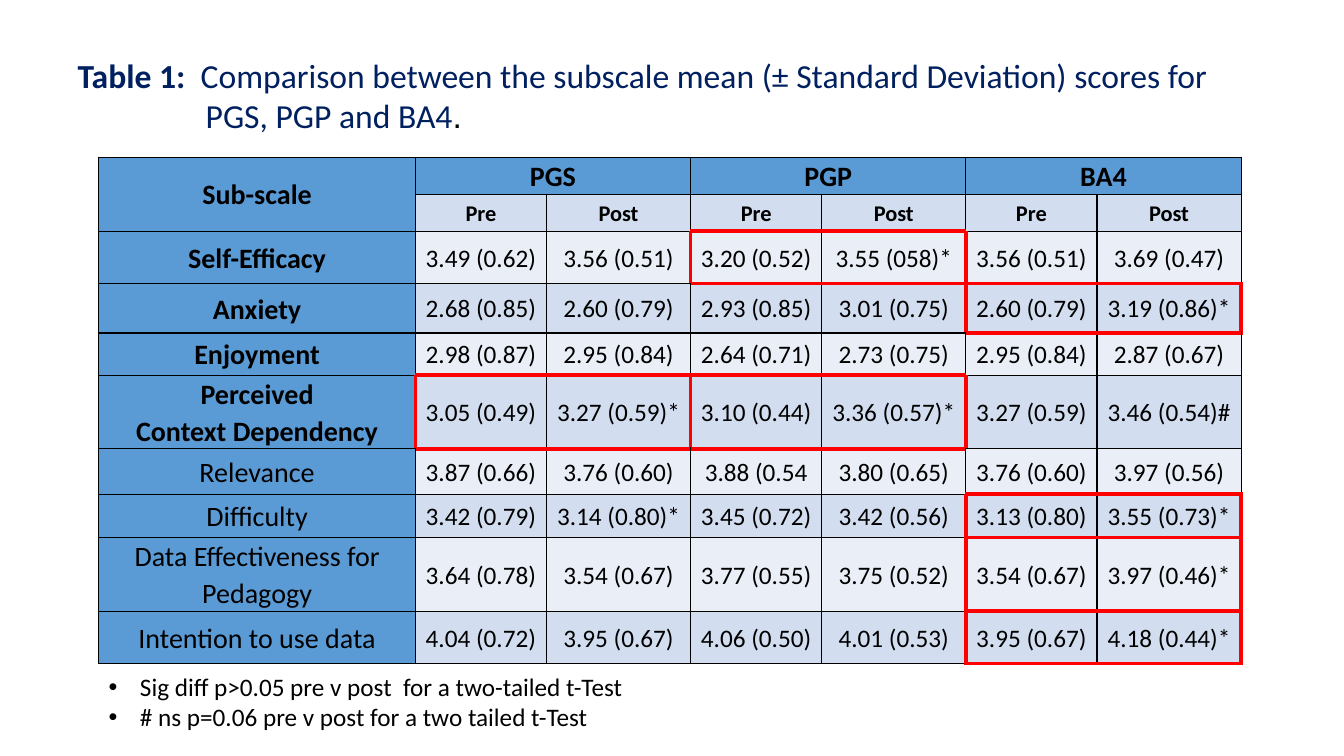
import dataclasses

import pptx
import pptx.dml.color
import pptx.enum.text
import pptx.oxml
import pptx.oxml.ns
import pptx.util

PX = 9144  # EMU in one px, 100 px to the inch
ALIGN = pptx.enum.text.PP_ALIGN
MIDDLE = pptx.enum.text.MSO_ANCHOR.MIDDLE


@dataclasses.dataclass(frozen=True)
class Theme:
    font: str = "Calibri"
    symbol_font: str = "Arial"
    black: str = "000000"
    navy: str = "002060"
    red: str = "FF0000"
    header: str = "5B9BD5"
    bands: tuple = ("EAEFF7", "D2DEEF")
    title_size: int = 24
    label_size: int = 20
    value_size: int = 18
    phase_size: int = 16
    thin: int = 1
    thick: int = 3
    cell_spacing: float = 1.07


GROUPS = ["PGS", "PGP", "BA4"]
COLUMN_WIDTHS = [314] + [130, 143] * len(GROUPS)
ROW_HEIGHTS = [37, 36, 52, 49, 42, 73, 45, 43, 73, 52]

# Label lines, bold label, values, groups outlined in red
SUBSCALES = [
    (["Self-Efficacy"], True, ["3.49 (0.62)", "3.56 (0.51)", "3.20 (0.52)",
                               "3.55 (058)*", "3.56 (0.51)", "3.69 (0.47)"], ["PGP"]),
    (["Anxiety"], True, ["2.68 (0.85)", "2.60 (0.79)", "2.93 (0.85)",
                         "3.01 (0.75)", "2.60 (0.79)", "3.19 (0.86)*"], ["BA4"]),
    (["Enjoyment"], True, ["2.98 (0.87)", "2.95 (0.84)", "2.64 (0.71)",
                           "2.73 (0.75)", "2.95 (0.84)", "2.87 (0.67)"], []),
    (["Perceived", "Context Dependency"], True,
     ["3.05 (0.49)", "3.27 (0.59)*", "3.10 (0.44)",
      "3.36 (0.57)*", "3.27 (0.59)", "3.46 (0.54)#"], ["PGS", "PGP"]),
    (["Relevance"], False, ["3.87 (0.66)", "3.76 (0.60)", "3.88 (0.54",
                            "3.80 (0.65)", "3.76 (0.60)", "3.97 (0.56)"], []),
    (["Difficulty"], False, ["3.42 (0.79)", "3.14 (0.80)*", "3.45 (0.72)",
                             "3.42 (0.56)", "3.13 (0.80)", "3.55 (0.73)*"], ["BA4"]),
    (["Data Effectiveness for Pedagogy"], False,
     ["3.64 (0.78)", "3.54 (0.67)", "3.77 (0.55)",
      "3.75 (0.52)", "3.54 (0.67)", "3.97 (0.46)*"], ["BA4"]),
    (["Intention to use data"], False, ["4.04 (0.72)", "3.95 (0.67)", "4.06 (0.50)",
                                        "4.01 (0.53)", "3.95 (0.67)", "4.18 (0.44)*"], ["BA4"]),
]


def outlined_group(row, column):
    """Return the group whose red outline holds this cell, if any."""
    if not 2 <= row < len(ROW_HEIGHTS) or not 1 <= column < len(COLUMN_WIDTHS):
        return None
    group = GROUPS[(column - 1) // 2]
    return group if group in SUBSCALES[row - 2][3] else None


class SlideBuilder:
    def __init__(self, deck, theme):
        self.theme = theme
        self.page = deck.slides.add_slide(deck.slide_layouts[5])

    def add_span(self, para, text, size, color, bold=False, font=None):
        span = para.add_run()
        span.text = text
        span.font.name = font or self.theme.font
        span.font.size = pptx.util.Pt(size)
        span.font.bold = bold
        span.font.color.rgb = pptx.dml.color.RGBColor.from_string(color)

    def hang(self, para, indent, bullet=None):
        properties = para._p.get_or_add_pPr()
        properties.set("marL", str(indent * PX))
        properties.set("indent", str(-indent * PX))
        if bullet:
            for tag, key, value in (("a:buFont", "typeface", self.theme.symbol_font),
                                    ("a:buChar", "char", bullet)):
                mark = pptx.oxml.ns.qn(tag)
                properties.append(properties.makeelement(mark, {key: value}))

    def title(self, left, top, width, height, spans, indent):
        box = self.page.shapes.title
        box.left, box.top, box.width, box.height = (n * PX for n in (left, top, width, height))
        box.text_frame.word_wrap = True
        box.text_frame.auto_size = pptx.enum.text.MSO_AUTO_SIZE.NONE
        box.text_frame.vertical_anchor = MIDDLE
        para = box.text_frame.paragraphs[0]
        para.alignment, para.line_spacing = ALIGN.LEFT, 1.0
        para.space_before = pptx.util.Pt(0)
        self.hang(para, indent)
        for text, options in spans:
            self.add_span(para, text, self.theme.title_size, **options)

    def bullets(self, left, top, width, height, lines, indent):
        box = self.page.shapes.add_textbox(*(n * PX for n in (left, top, width, height)))
        frame = box.text_frame
        frame.word_wrap = True
        for index, line in enumerate(lines):
            para = frame.add_paragraph() if index else frame.paragraphs[0]
            self.hang(para, indent, "•")
            self.add_span(para, line, self.theme.value_size, self.theme.black)

    def table(self, left, top, widths, heights):
        frame = self.page.shapes.add_table(len(heights), len(widths), left * PX, top * PX,
                                           sum(widths) * PX, sum(heights) * PX)
        table = frame.table
        table.first_row = table.horz_banding = False
        for column, width in zip(table.columns, widths):
            column.width = width * PX
        for row, height in zip(table.rows, heights):
            row.height = height * PX
        return table

    def borders(self, cell, row, column):
        """Draw red where an outlined group ends, black elsewhere."""
        here = outlined_group(row, column)
        neighbours = {"L": (row, column - 1), "R": (row, column + 1),
                      "T": (row - 1, column), "B": (row + 1, column)}
        for side, place in neighbours.items():
            there = outlined_group(*place)
            inside = side in "LR" and here == there
            red = (here or there) and not inside
            color = self.theme.red if red else self.theme.black
            points = self.theme.thick if red else self.theme.thin
            cell._tc.get_or_add_tcPr().append(pptx.oxml.parse_xml(
                f'<a:ln{side} {pptx.oxml.ns.nsdecls("a")} w="{points * 12700}">'
                f'<a:solidFill><a:srgbClr val="{color}"/></a:solidFill></a:ln{side}>'))

    def cell(self, table, row, column, lines, fill, size, bold=False):
        cell = table.cell(row, column)
        self.borders(cell, row, column)
        cell.fill.solid()
        cell.fill.fore_color.rgb = pptx.dml.color.RGBColor.from_string(fill)
        cell.vertical_anchor = MIDDLE
        cell.margin_left = cell.margin_right = 7 * PX
        cell.margin_top = cell.margin_bottom = 0
        for index, line in enumerate(lines):
            frame = cell.text_frame
            para = frame.add_paragraph() if index else frame.paragraphs[0]
            para.alignment, para.line_spacing = ALIGN.CENTER, self.theme.cell_spacing
            self.add_span(para, line, size, self.theme.black, bold)


def main():
    deck = pptx.Presentation()
    deck.slide_width, deck.slide_height = 1333 * PX, 750 * PX
    theme = Theme()
    slide = SlideBuilder(deck, theme)

    # Title
    slide.title(67, 49, 1192, 91, [
        ("Table 1:  ", {"color": theme.navy, "bold": True}),
        ("Comparison between the subscale mean (± Standard Deviation) scores for "
         "PGS, PGP and BA4", {"color": theme.navy}),
        (".", {"color": theme.black, "font": theme.symbol_font}),
    ], indent=127)

    # Table header
    table = slide.table(98, 156, COLUMN_WIDTHS, ROW_HEIGHTS)
    slide.cell(table, 0, 0, ["Sub-scale"], theme.header, theme.label_size, True)
    slide.cell(table, 1, 0, [], theme.header, theme.label_size)
    table.cell(0, 0).merge(table.cell(1, 0))
    for index, group in enumerate(GROUPS):
        first = 1 + 2 * index
        slide.cell(table, 0, first, [group], theme.header, theme.label_size, True)
        slide.cell(table, 0, first + 1, [], theme.header, theme.label_size)
        table.cell(0, first).merge(table.cell(0, first + 1))
        for offset, phase in enumerate(["Pre", "Post"]):
            slide.cell(table, 1, first + offset, [phase], theme.bands[1],
                       theme.phase_size, True)

    # Table body
    for row, (label, bold, values, _) in enumerate(SUBSCALES, start=2):
        slide.cell(table, row, 0, label, theme.header, theme.label_size, bold)
        for column, value in enumerate(values, start=1):
            slide.cell(table, row, column, [value], theme.bands[row % 2], theme.value_size)

    # Footnotes
    slide.bullets(98, 661, 552, 71, [
        "Sig diff p>0.05 pre v post  for a two-tailed t-Test",
        "# ns p=0.06 pre v post for a two tailed t-Test",
    ], indent=31)

    deck.save("out.pptx")


if __name__ == "__main__":
    main()
